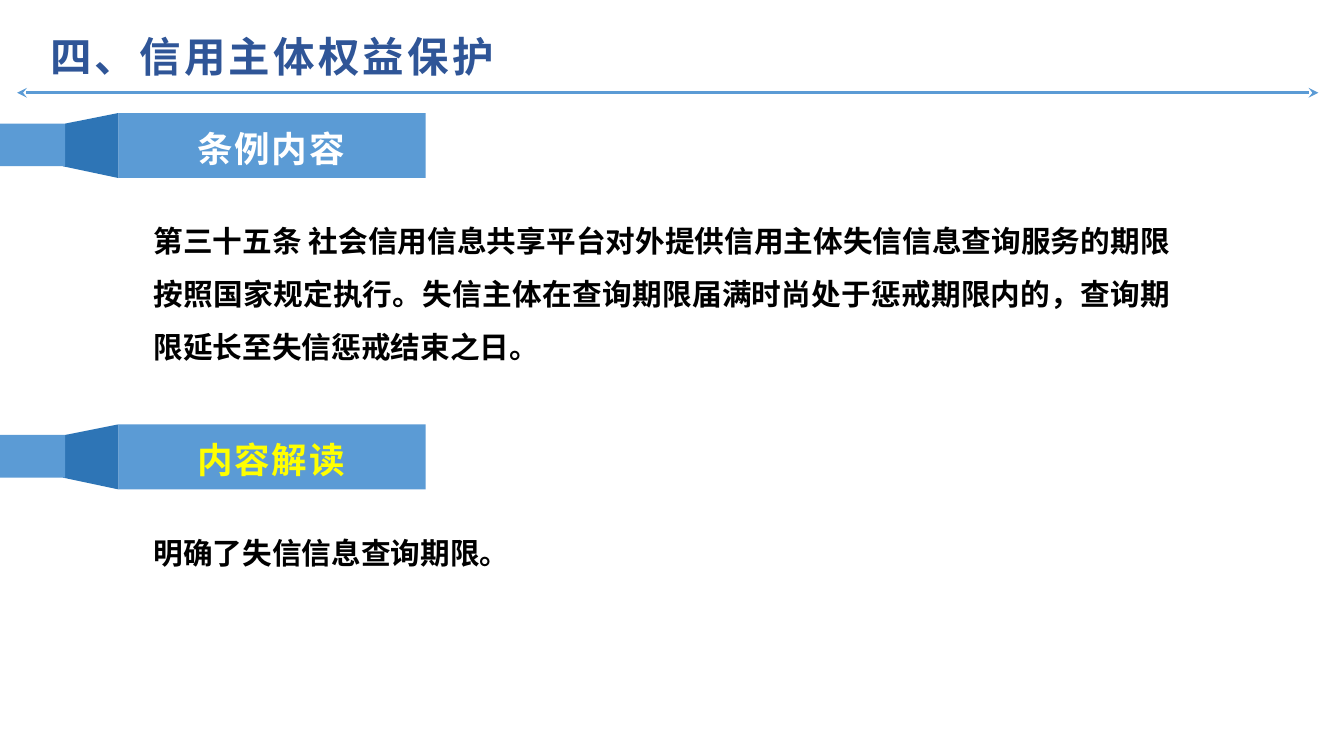
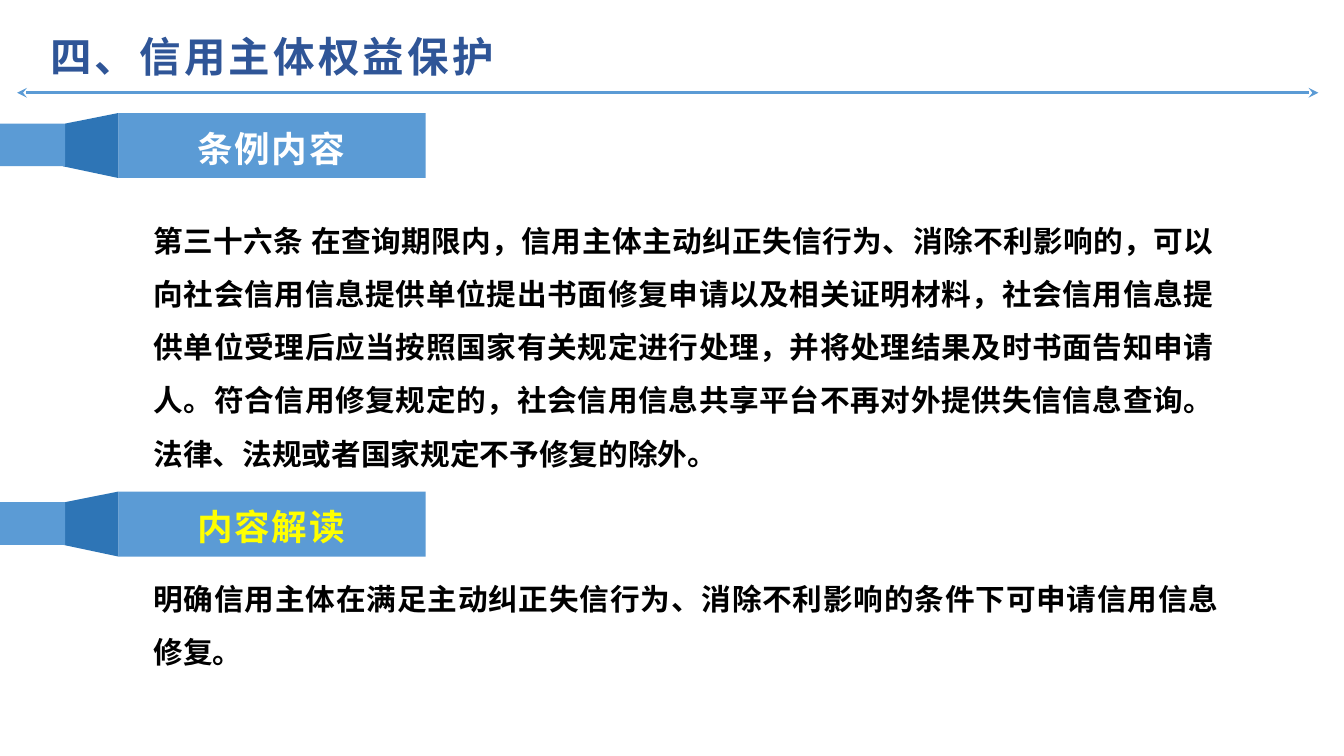
from lxml import etree
from pptx import Presentation
from pptx.dml.color import RGBColor
from pptx.enum.shapes import MSO_CONNECTOR, MSO_SHAPE
from pptx.enum.text import MSO_ANCHOR, MSO_AUTO_SIZE, PP_ALIGN
from pptx.oxml.ns import qn
from pptx.util import Inches, Pt

COLORS = {
    "title": "2F5597",
    "band": "5B9BD5",
    "fold": "2E75B6",
    "white": "FFFFFF",
    "yellow": "FFFF00",
    "body": "000000",
}
FONT = "Noto Sans CJK SC"
TITLE = "四、信用主体权益保护"
TITLE_BOX = (0.42, 0.03, 11.68, 0.76)
TITLE_FRAME = {
    "margin_left": Inches(0.05),
    "margin_right": Inches(0.05),
    "margin_top": Inches(0.03),
    "margin_bottom": Inches(0.03),
}
RULE_Y = 0.87
BODY_LEFT = 1.34
FOLD_LEFT, TAIL_RIGHT, BANNER_LEFT = 0.59, 0.61, 1.11
BANNER_HEIGHT, TAIL_INSET, TAIL_HEIGHT = 0.61, 0.1, 0.4

# Each section: heading, heading colour, banner top, body top, width, height, body
SLIDES = [
    [
        ("条例内容", "white", 1.06, 1.87, 9.73, 1.61,
         "第三十五条 社会信用信息共享平台对外提供信用主体失信信息查询服务的期限"
         "按照国家规定执行。失信主体在查询期限届满时尚处于惩戒期限内的，查询期"
         "限延长至失信惩戒结束之日。"),
        ("内容解读", "yellow", 3.98, 4.8, 9.57, 0.6,
         "明确了失信信息查询期限。"),
    ],
    [
        ("条例内容", "white", 1.06, 1.87, 10.14, 2.62,
         "第三十六条 在查询期限内，信用主体主动纠正失信行为、消除不利影响的，可以"
         "向社会信用信息提供单位提出书面修复申请以及相关证明材料，社会信用信息提"
         "供单位受理后应当按照国家有关规定进行处理，并将处理结果及时书面告知申请"
         "人。符合信用修复规定的，社会信用信息共享平台不再对外提供失信信息查询。"
         "法律、法规或者国家规定不予修复的除外。"),
        ("内容解读", "yellow", 4.61, 5.23, 10.18, 1.11,
         "明确信用主体在满足主动纠正失信行为、消除不利影响的条件下可申请信用信息"
         "修复。"),
    ],
]


def write_text(holder, text, size, color, align, spacing=0):
    """Fill a text holder with one bold paragraph; spacing is in points."""
    frame = holder.text_frame
    frame_format = {
        "word_wrap": True,
        "auto_size": MSO_AUTO_SIZE.NONE,
        "vertical_anchor": MSO_ANCHOR.TOP,
    }
    for key, value in frame_format.items():
        setattr(frame, key, value)
    paragraph = frame.paragraphs[0]
    paragraph.alignment = align
    paragraph.line_spacing = 1.5
    run = paragraph.add_run()
    run.text = text
    for key, value in {"size": Pt(size), "bold": True, "name": FONT}.items():
        setattr(run.font, key, value)
    run.font.color.rgb = RGBColor.from_string(COLORS[color])
    properties = run.font._element
    etree.SubElement(properties, qn("a:ea"), typeface=FONT)
    if spacing:
        properties.set("spc", str(round(spacing * 100)))


def paint(shape, color):
    shape.shadow.inherit = False
    shape.fill.solid()
    shape.fill.fore_color.rgb = RGBColor.from_string(COLORS[color])
    shape.line.fill.background()


prs = Presentation()
prs.slide_width = Inches(12.6)
prs.slide_height = Inches(7.09)

for sections in SLIDES:
    slide = prs.slides.add_slide(prs.slide_layouts[5])

    title = slide.shapes.title
    for side, length in zip(("left", "top", "width", "height"), TITLE_BOX):
        setattr(title, side, Inches(length))
    for key, value in TITLE_FRAME.items():
        setattr(title.text_frame, key, value)
    write_text(title, TITLE, 28, "title", PP_ALIGN.LEFT, 2.2)

    title_rule = slide.shapes.add_connector(
        MSO_CONNECTOR.STRAIGHT,
        Inches(0.16), Inches(RULE_Y), Inches(12.36), Inches(RULE_Y))
    title_rule.line.color.rgb = RGBColor.from_string(COLORS["band"])
    title_rule.line.width = Pt(2.25)
    stroke = title_rule.line._get_or_add_ln()
    for arrow_end in ("a:headEnd", "a:tailEnd"):
        etree.SubElement(stroke, qn(arrow_end), type="stealth")
    etree.SubElement(title_rule._element.spPr, qn("a:effectLst"))

    for heading, heading_color, top, body_top, width, height, body in sections:
        ribbon = slide.shapes.add_group_shape().shapes
        tail_top = top + TAIL_INSET
        tail_bottom = tail_top + TAIL_HEIGHT

        banner = ribbon.add_shape(
            MSO_SHAPE.RECTANGLE, Inches(BANNER_LEFT), Inches(top),
            Inches(2.88), Inches(BANNER_HEIGHT))
        paint(banner, "band")

        outline = [
            (FOLD_LEFT, tail_bottom),
            (TAIL_RIGHT, tail_top),
            (BANNER_LEFT, top),
            (BANNER_LEFT, top + BANNER_HEIGHT),
        ]
        corners = [(Inches(x), Inches(y)) for x, y in outline]
        fold = ribbon.build_freeform(*corners[0])
        fold.add_line_segments(corners[1:], close=True)
        paint(fold.convert_to_shape(), "fold")

        tail = ribbon.add_shape(
            MSO_SHAPE.RECTANGLE, 0, Inches(tail_top),
            Inches(TAIL_RIGHT), Inches(TAIL_HEIGHT))
        paint(tail, "band")

        label = ribbon.add_textbox(
            Inches(1.69), Inches(top - 0.12), Inches(1.7), Inches(0.71))
        write_text(label, heading, 24, heading_color, PP_ALIGN.CENTER, 1.2)

        passage = slide.shapes.add_textbox(
            Inches(BODY_LEFT), Inches(body_top), Inches(width), Inches(height))
        write_text(passage, body, 20, "body", PP_ALIGN.JUSTIFY)

prs.save("out.pptx")
